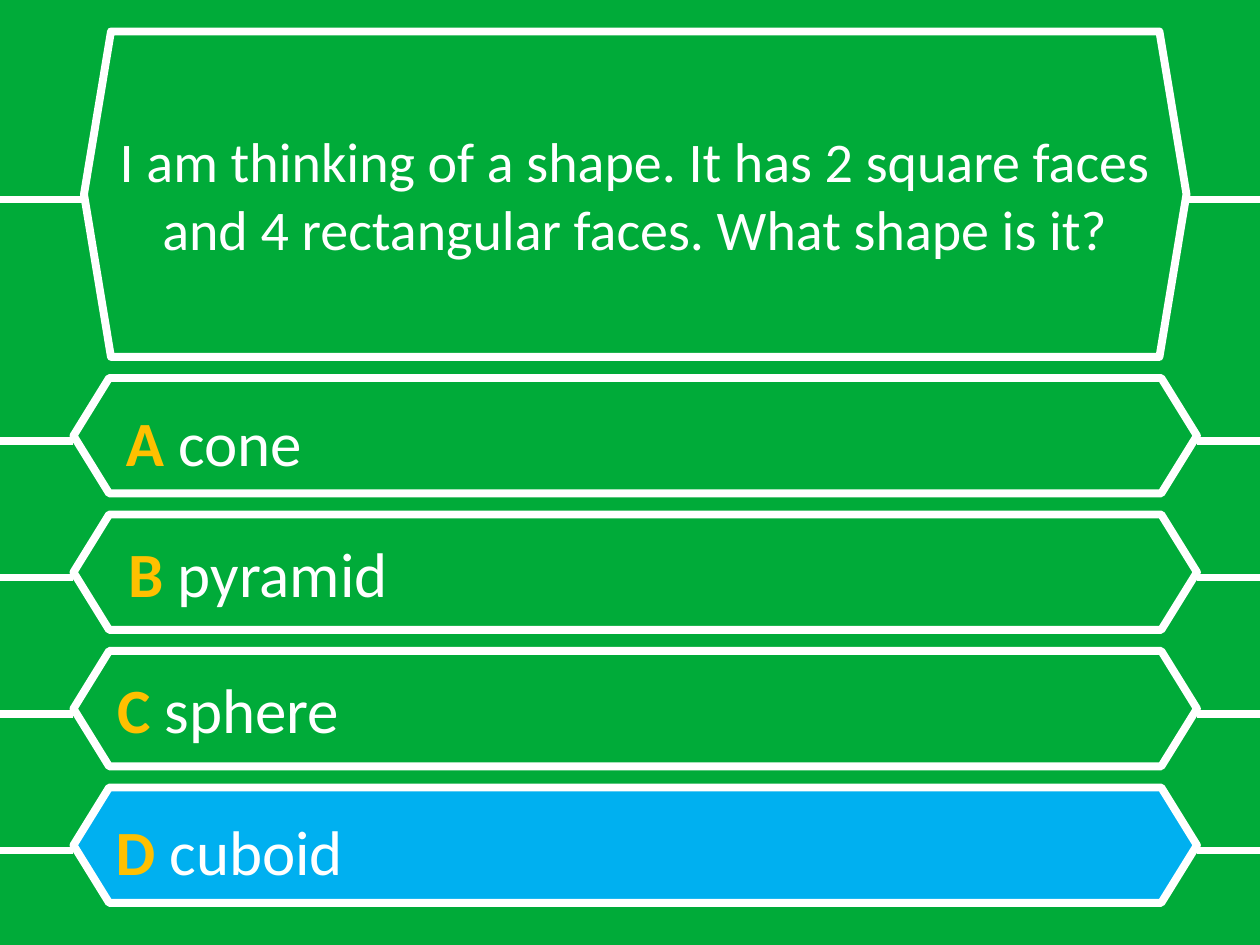
from dataclasses import dataclass

from lxml import etree
from pptx import Presentation
from pptx.dml.color import RGBColor
from pptx.enum import shapes, text
from pptx.oxml import ns
from pptx.util import Pt


@dataclass(frozen=True)
class Theme:
    """Colours, type and line sizes of the quiz."""
    back: str = "00AB39"
    white: str = "FFFFFF"
    gold: str = "FFC000"
    blue: str = "00B0F0"
    font: str = "Calibri"
    ask: int = 32
    reply: int = 36
    rule: float = 4.5


THEME = Theme()
WIDE, HIGH = 720, 540
ROWS = [
    ("A", "cone", 22.8, 10.8, None),
    ("B", "pyramid", 24.2, 7.7, None),
    ("C", "sphere", 17.8, 7.4, None),
    ("D", "cuboid", 17, 10.8, THEME.blue),
]


def rgb(code):
    """Turn a hex code into a colour."""
    return RGBColor.from_string(code)


def write(para, words, size, color=THEME.white, bold=False):
    """Add a formatted run to a paragraph."""
    run = para.add_run()
    run.text = words
    font = run.font
    font.name, font.size, font.bold = THEME.font, Pt(size), bold
    font.color.rgb = rgb(color)


def stroke(line):
    """Give a line the white rule."""
    line.color.rgb = rgb(THEME.white)
    line.width = Pt(THEME.rule)


def wire(slide, start, end, y):
    """Draw a level line between two x positions."""
    link = slide.shapes.add_connector(
        shapes.MSO_CONNECTOR.STRAIGHT, Pt(start), Pt(y), Pt(end), Pt(y))
    stroke(link.line)
    etree.SubElement(link._element.spPr, ns.qn("a:effectLst"))


def frame(slide, box, slant, level, fill=None):
    """Draw a hexagon with lines out to both slide edges."""
    left, top, width, height = box
    hexa = slide.shapes.add_shape(
        shapes.MSO_SHAPE.HEXAGON, *(Pt(n) for n in box))
    hexa.shadow.inherit = False
    hexa.adjustments[0] = slant
    if fill:
        hexa.fill.solid()
        hexa.fill.fore_color.rgb = rgb(fill)
    else:
        hexa.fill.background()
    stroke(hexa.line)
    wire(slide, left, 0, top + level)
    wire(slide, WIDE, left + width, top + level)


def question(slide, box, words):
    """Place the framed question in the title."""
    frame(slide, box, 0.083, 96)
    left, top, width, height = box
    title = slide.shapes.title
    title.left, title.top = Pt(left + 12), Pt(top + 12)
    title.width, title.height = Pt(width - 24), Pt(height - 24)
    body = title.text_frame
    body.word_wrap = True
    body.vertical_anchor = text.MSO_ANCHOR.MIDDLE
    para = body.paragraphs[0]
    para.alignment = text.PP_ALIGN.CENTER
    write(para, words, THEME.ask)


def answer(slide, box, letter, words, dx, dy, fill):
    """Place one framed answer with its letter."""
    frame(slide, box, 0.309, 36, fill)
    left, top = box[:2]
    label = slide.shapes.add_textbox(
        Pt(left + dx), Pt(top + dy), Pt(618.5), Pt(51))
    label.text_frame.word_wrap = True
    para = label.text_frame.paragraphs[0]
    write(para, letter + " ", THEME.reply, color=THEME.gold, bold=True)
    write(para, words, THEME.reply)


def main():
    """Build and save the quiz slide."""
    deck = Presentation()
    deck.slide_width, deck.slide_height = Pt(WIDE), Pt(HIGH)
    slide = deck.slides.add_slide(deck.slide_layouts.get_by_name("Title Only"))
    back = slide.background.fill
    back.solid()
    back.fore_color.rgb = rgb(THEME.back)
    question(slide, (48, 18, 630, 186),
             "I am thinking of a shape. It has 2 square faces and "
             "4 rectangular faces. What shape is it?")
    for i, row in enumerate(ROWS):
        answer(slide, (42, 216 + 78 * i, 642, 66), *row)
    deck.save("out.pptx")


if __name__ == "__main__":
    main()
